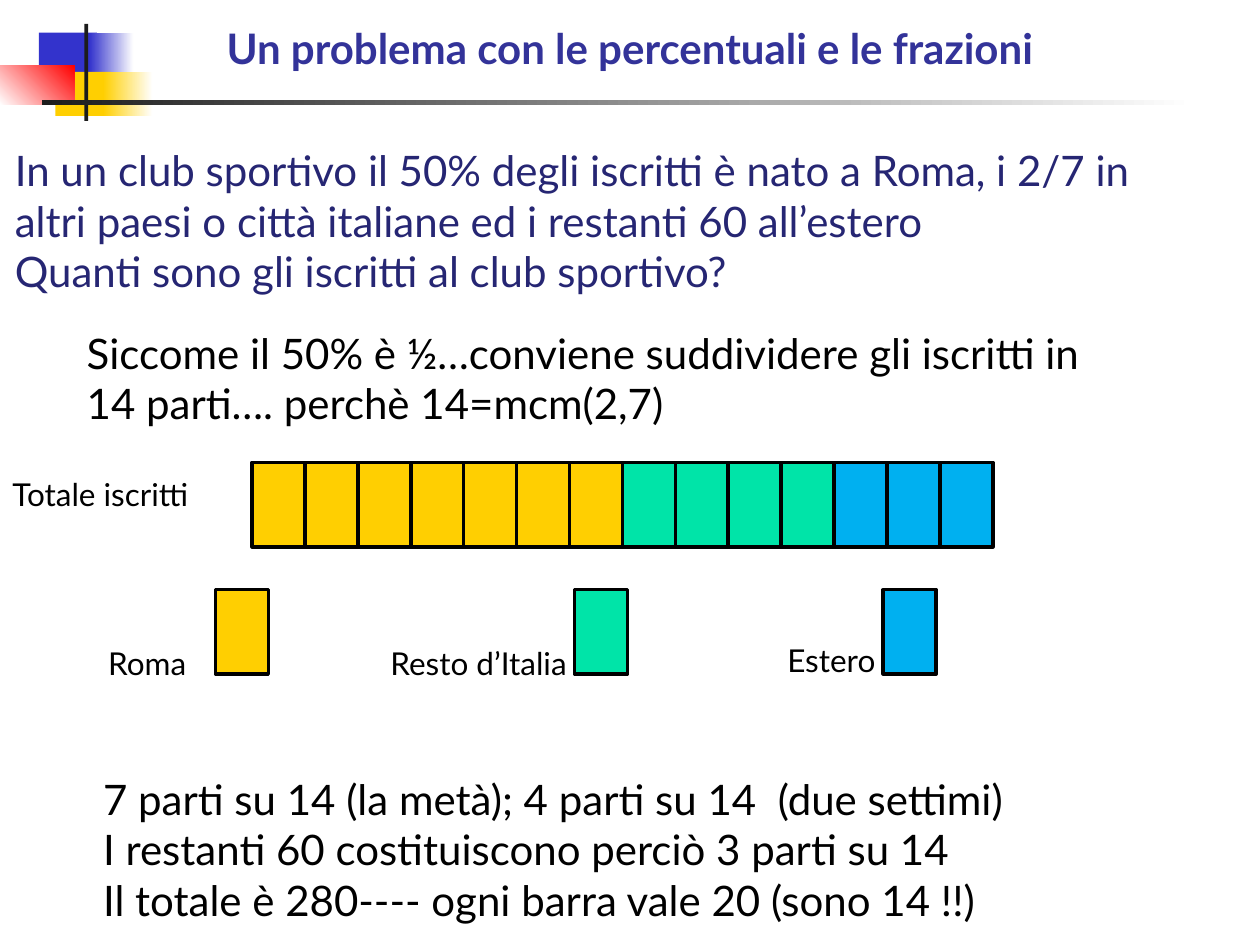
"""Build a slide that solves a percentage and fraction problem with a bar of 14 parts."""
from pptx import Presentation
from pptx.dml.color import RGBColor
from pptx.enum.shapes import MSO_SHAPE
from pptx.util import Inches, Pt

RECTANGLE = MSO_SHAPE.RECTANGLE
FONT = "Lato"
BLACK = RGBColor(0x00, 0x00, 0x00)
WHITE = RGBColor(0xFF, 0xFF, 0xFF)
CHARCOAL = RGBColor(0x1C, 0x1C, 0x1C)
BLUE = RGBColor(0x33, 0x33, 0xCC)
RED = RGBColor(0xFF, 0x00, 0x00)
YELLOW = RGBColor(0xFF, 0xCF, 0x01)
GREEN = RGBColor(0x00, 0xE4, 0xA8)
SKY = RGBColor(0x00, 0xB0, 0xF0)
TITLE_BLUE = RGBColor(0x33, 0x33, 0x99)
NAVY = RGBColor(0x26, 0x26, 0x73)

TITLE = ["Un problema con le percentuali e le frazioni"]
PROBLEM = [
    "In un club sportivo il 50% degli iscritti è nato a Roma, i 2/7 in altri paesi "
    "o città italiane ed i restanti 60 all’estero",
    "Quanti sono gli iscritti al club sportivo?",
]
HINT = ["Siccome il 50% è ½…conviene suddividere gli iscritti in 14 parti…. perchè 14=mcm(2,7)"]
SOLUTION = [
    "7 parti su 14 (la metà); 4 parti su 14  (due settimi)",
    "I restanti 60 costituiscono perciò 3 parti su 14",
    "Il totale è 280---- ogni barra vale 20 (sono 14 !!)",
]
TOTAL = ["Totale iscritti"]

GROUPS = [
    {"label": "Roma", "parts": 7, "color": YELLOW, "key_left": 1.71, "label_at": (0.76, 5.06, 1.54, 0.4)},
    {"label": "Resto d’Italia", "parts": 4, "color": GREEN, "key_left": 4.56, "label_at": (3, 5.06, 1.77, 0.4)},
    {"label": "Estero", "parts": 3, "color": SKY, "key_left": 7.01, "label_at": (6.15, 5.04, 1.54, 0.4)},
]
BAR_LEFT, BAR_TOP, KEY_TOP = 2, 3.67, 4.68
PART_WIDTH, PART_HEIGHT = 0.42, 0.67

ORNAMENT = [
    ((0.31, 0.26, 0.46, 0.35), (BLUE,), 0),
    ((0.71, 0.26, 0.35, 0.35), (BLUE, WHITE), 0),
    ((0.44, 0.57, 0.44, 0.35), (YELLOW,), 0),
    ((0.82, 0.57, 0.39, 0.35), (YELLOW, WHITE), 0),
    ((0, 0.52, 0.59, 0.31), (WHITE, RED), 45),
    ((0.67, 0.19, 0.03, 0.77), (CHARCOAL,), 0),
    ((0.33, 0.79, 9.15, 0.04), (CHARCOAL, WHITE), 0),
]


def add_rectangle(page, place, colors, angle=0, outlined=False):
    """Add a rectangle with a solid fill or a two-colour gradient."""
    box = page.shapes.add_shape(RECTANGLE, *map(Inches, place))
    box.shadow.inherit = False
    if len(colors) == 1:
        box.fill.solid()
        box.fill.fore_color.rgb = colors[0]
    else:
        box.fill.gradient()
        box.fill.gradient_angle = angle
        for stop, color in zip(box.fill.gradient_stops, colors):
            stop.color.rgb = color
    if outlined:
        box.line.color.rgb = BLACK
        box.line.width = Pt(2)
    else:
        box.line.fill.background()


def add_text(page, place, lines, size=24, color=BLACK, bold=False):
    """Add a wrapped text box with one paragraph per line."""
    frame = page.shapes.add_textbox(*map(Inches, place)).text_frame
    frame.word_wrap = True
    for index, line in enumerate(lines):
        paragraph = frame.add_paragraph() if index else frame.paragraphs[0]
        span = paragraph.add_run()
        span.text = line
        span.font.name = FONT
        span.font.size = Pt(size)
        span.font.bold = bold
        span.font.color.rgb = color


def main():
    """Lay out the slide and save the deck."""
    deck = Presentation()
    deck.slide_width, deck.slide_height = Inches(10), Inches(7.5)
    page = deck.slides.add_slide(deck.slide_layouts[6])

    for place, colors, angle in ORNAMENT:
        add_rectangle(page, place, colors, angle)

    add_text(page, (1.7, 0.13, 7.61, 0.91), TITLE, color=TITLE_BLUE, bold=True)
    add_text(page, (0.02, 1.1, 9.56, 1.31), PROBLEM, color=NAVY)
    add_text(page, (0.59, 2.55, 8.13, 0.91), HINT)
    add_text(page, (0, 3.72, 2, 0.4), TOTAL, size=18)

    part_colors = [group["color"] for group in GROUPS for _ in range(group["parts"])]
    for index, color in enumerate(part_colors):
        left = BAR_LEFT + index * PART_WIDTH
        add_rectangle(page, (left, BAR_TOP, PART_WIDTH, PART_HEIGHT), (color,), outlined=True)

    for group in GROUPS:
        key_place = (group["key_left"], KEY_TOP, PART_WIDTH, PART_HEIGHT)
        add_rectangle(page, key_place, (group["color"],), outlined=True)
        add_text(page, group["label_at"], [group["label"]], size=18)

    add_text(page, (0.72, 6.09, 8.13, 1.31), SOLUTION)
    deck.save("out.pptx")


if __name__ == "__main__":
    main()
